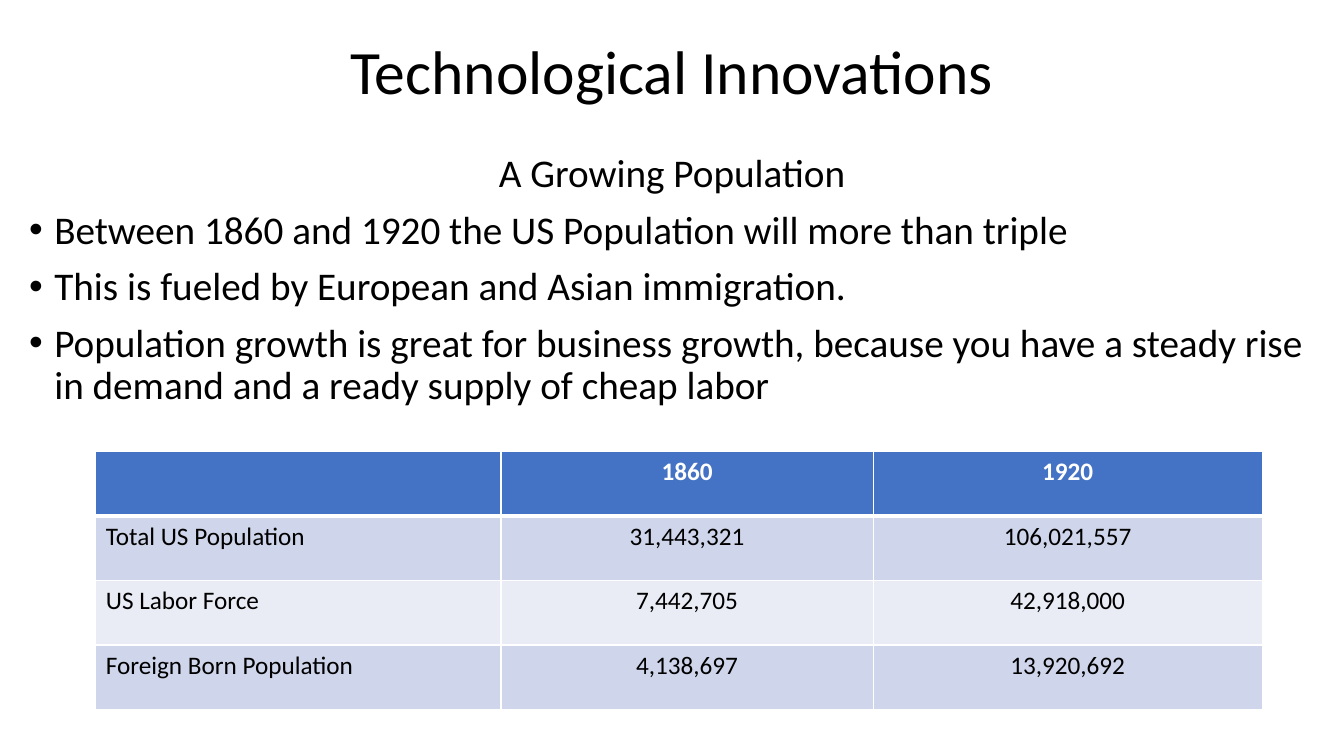
import pptx
import pptx.util
import pptx.dml.color
import pptx.enum.text
import pptx.oxml
import pptx.oxml.ns
from lxml import etree

Inches, Pt = pptx.util.Inches, pptx.util.Pt
RGB = pptx.dml.color.RGBColor
ALIGN, ANCHOR = pptx.enum.text.PP_ALIGN, pptx.enum.text.MSO_ANCHOR
qn = pptx.oxml.ns.qn

TITLE = "Technological Innovations"
HEAD = "A Growing Population"
POINTS = [
    "Between 1860 and 1920 the US Population will more than triple",
    "This is fueled by European and Asian immigration.",
    "Population growth is great for business growth, because you have "
    "a steady rise in demand and a ready supply of cheap labor",
]
ROWS = [
    ("", "1860", "1920"),
    ("Total US Population", "31,443,321", "106,021,557"),
    ("US Labor Force", "7,442,705", "42,918,000"),
    ("Foreign Born Population", "4,138,697", "13,920,692"),
]
WIDTHS = [4.02, 3.69, 3.86]
ROW_H = 0.64

FONT = "Calibri"
BLACK = RGB(0, 0, 0)
WHITE = RGB(0xFF, 0xFF, 0xFF)
BLUE = RGB(0x44, 0x72, 0xC4)
BANDS = [RGB(0xE9, 0xEB, 0xF5), RGB(0xCF, 0xD5, 0xEA)]


def style(para, size, color=BLACK, bold=False, align=ALIGN.LEFT):
    para.alignment = align
    for run in para.runs:
        font = run.font
        font.name, font.size, font.bold = FONT, Pt(size), bold
        font.color.rgb = color


def bullet(para):
    props = para._p.get_or_add_pPr()
    props.set("marL", str(Inches(0.25)))
    props.set("indent", str(-Inches(0.25)))
    etree.SubElement(props, qn("a:buFont")).set("typeface", "Arial")
    etree.SubElement(props, qn("a:buChar")).set("char", "•")


def border(cell, widths):
    """Draw white cell borders; widths maps each side to points."""
    props = cell._tc.get_or_add_tcPr()
    for side, width in widths.items():
        line = etree.SubElement(props, qn("a:ln" + side), w=str(Pt(width)))
        fill = etree.SubElement(line, qn("a:solidFill"))
        etree.SubElement(fill, qn("a:srgbClr")).set("val", str(WHITE))


def add_title(slide):
    title = slide.shapes.title
    title.left, title.top = Inches(0.19), Inches(0.18)
    title.width, title.height = Inches(12.95), Inches(1.12)
    frame = title.text_frame
    frame.text = TITLE
    frame.vertical_anchor = ANCHOR.MIDDLE
    para = frame.paragraphs[0]
    para.line_spacing = 0.9
    style(para, 44, align=ALIGN.CENTER)


def add_body(slide):
    box = slide.shapes.add_textbox(
        Inches(0.19), Inches(1.48), Inches(12.95), Inches(4.76))
    frame = box.text_frame
    frame.word_wrap = True
    frame.text = "\n".join([HEAD] + POINTS)
    for i, para in enumerate(frame.paragraphs):
        para.line_spacing = 0.9
        para.space_before = Pt(10)
        style(para, 28, align=ALIGN.LEFT if i else ALIGN.CENTER)
        if i:
            bullet(para)


def add_grid(slide):
    grid = slide.shapes.add_table(
        len(ROWS), len(WIDTHS), Inches(0.95), Inches(4.48),
        Inches(sum(WIDTHS)), Inches(ROW_H * len(ROWS))).table
    for col, width in zip(grid.columns, WIDTHS):
        col.width = Inches(width)
    for r, row in enumerate(ROWS):
        grid.rows[r].height = Inches(ROW_H)
        top = r == 0
        for c, text in enumerate(row):
            cell = grid.cell(r, c)
            cell.text_frame.text = text
            style(cell.text_frame.paragraphs[0], 18,
                  WHITE if top else BLACK, top,
                  ALIGN.CENTER if c else ALIGN.LEFT)
            border(cell, {"L": 1, "R": 1, "T": 3 if r == 1 else 1,
                          "B": 3 if top else 1})
            cell.fill.solid()
            cell.fill.fore_color.rgb = BLUE if top else BANDS[r % 2]


def main():
    deck = pptx.Presentation()
    deck.slide_width, deck.slide_height = Inches(13.33), Inches(7.5)
    slide = deck.slides.add_slide(deck.slide_layouts[5])
    add_title(slide)
    add_body(slide)
    add_grid(slide)
    deck.save("out.pptx")


if __name__ == "__main__":
    main()
